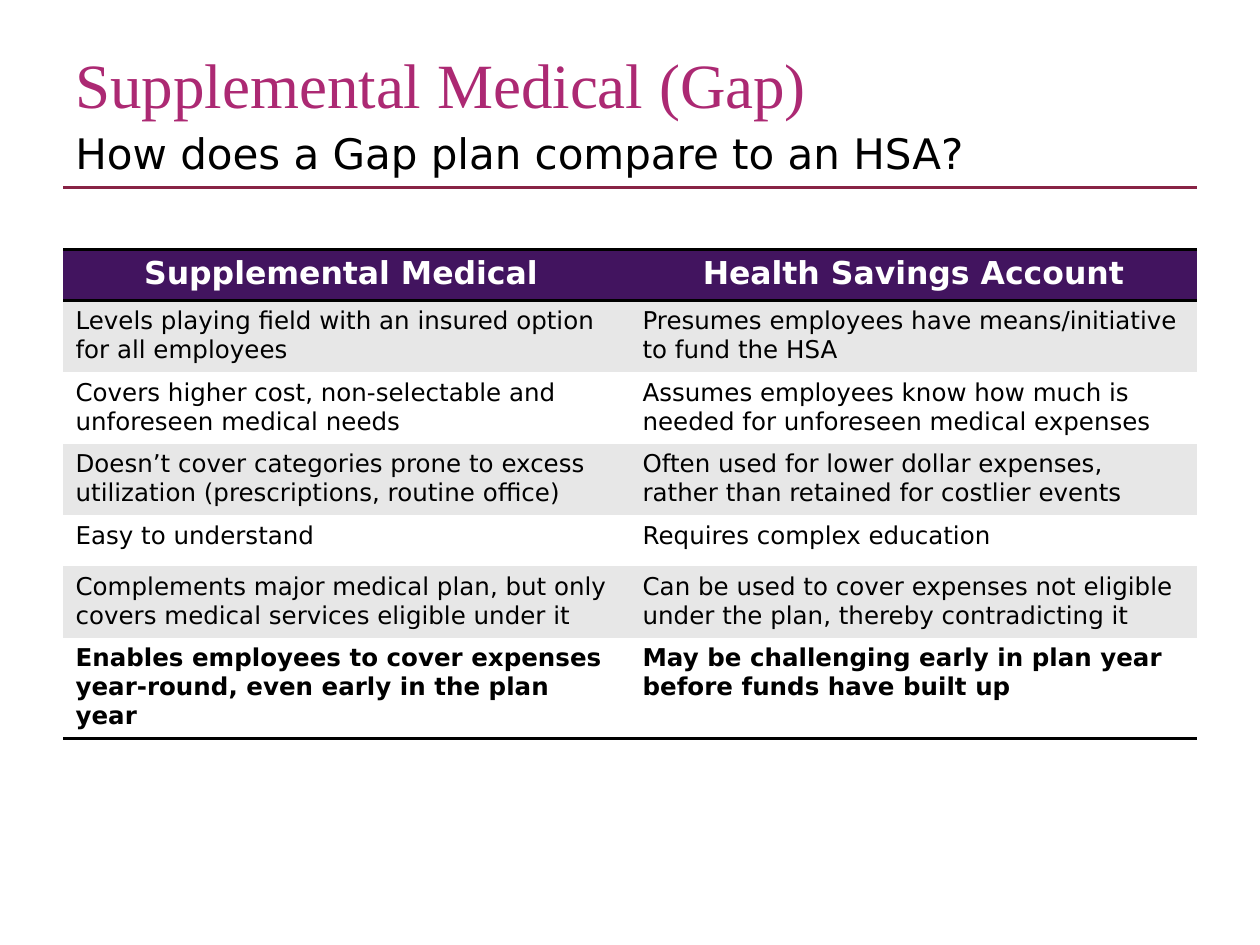
from lxml.etree import SubElement
from pptx import Presentation
from pptx.dml.color import RGBColor
from pptx.enum.shapes import MSO_CONNECTOR as Line
from pptx.enum.text import MSO_ANCHOR as Anchor, PP_ALIGN as Align
from pptx.oxml import parse_xml
from pptx.oxml.ns import nsdecls, qn
from pptx.util import Cm, Pt

PINK = RGBColor(0xAC, 0x29, 0x73)
WINE = RGBColor(0x88, 0x23, 0x45)
PLUM = RGBColor(0x42, 0x14, 0x5F)
GREY = RGBColor(0xE7, 0xE7, 0xE7)
WHITE = RGBColor(0xFF, 0xFF, 0xFF)
BLACK = RGBColor(0, 0, 0)
SANS = "DejaVu Sans"
SERIF = "Times New Roman"
PLAIN = "{2D5ABB26-0587-4C30-8999-92F81FD0307C}"

HEADS = [
    ("Supplemental Medical (Gap)", 0.76, 1.83, SERIF, 36, PINK),
    ("How does a Gap plan compare to an HSA?", 2.59, 0.97, SANS, 24, BLACK),
]
ROWS = [
    ("Supplemental Medical ", "Health Savings Account"),
    ("Levels playing field with an insured option for all employees",
     "Presumes employees have means/initiative to fund the HSA"),
    ("Covers higher cost, non-selectable and unforeseen medical needs",
     "Assumes employees know how much is needed for unforeseen medical expenses"),
    ("Doesn’t cover categories prone to excess utilization (prescriptions, routine office)",
     "Often used for lower dollar expenses, rather than retained for costlier events"),
    ("Easy to understand", "Requires complex education"),
    ("Complements major medical plan, but only covers medical services eligible under it",
     "Can be used to cover expenses not eligible under the plan, thereby contradicting it"),
    ("Enables employees to cover expenses year-round, even early in the plan year",
     "May be challenging early in plan year before funds have built up"),
]
LEFT, WIDTH = 1.27, 22.86
RULE, TOP, HIGH = 3.78, 5.03, 1.03


def style(font, name, size, color, bold=False):
    font.name, font.size, font.bold = name, Pt(size), bold
    font.color.rgb = color


def add_head(slide, text, top, high, name, size, color):
    box = slide.shapes.add_textbox(Cm(LEFT), Cm(top), Cm(WIDTH), Cm(high))
    frame = box.text_frame
    frame.word_wrap = True
    frame.vertical_anchor = Anchor.MIDDLE
    frame.text = text
    style(frame.paragraphs[0].runs[0].font, name, size, color)


def add_rule(slide):
    rule = slide.shapes.add_connector(
        Line.STRAIGHT, Cm(LEFT), Cm(RULE), Cm(LEFT + WIDTH), Cm(RULE))
    rule.line.color.rgb = WINE
    rule.line.width = Pt(2)
    SubElement(rule._element.spPr, qn("a:effectLst"))


def add_edges(cell, tags):
    props = cell._tc.get_or_add_tcPr()
    for spot, tag in enumerate(tags):
        props.insert(spot, parse_xml(
            f'<a:{tag} {nsdecls("a")} w="{Pt(2)}"><a:solidFill>'
            f'<a:srgbClr val="{BLACK}"/></a:solidFill></a:{tag}>'))


def add_grid(slide):
    count, last = len(ROWS), len(ROWS) - 1
    grid = slide.shapes.add_table(
        count, 2, Cm(LEFT), Cm(TOP), Cm(WIDTH), Cm(HIGH * count)).table
    grid._tbl.tblPr.find(qn("a:tableStyleId")).text = PLAIN
    for row, texts in enumerate(ROWS):
        head = row == 0
        fill = PLUM if head else GREY if row % 2 else WHITE
        for col, text in enumerate(texts):
            cell = grid.cell(row, col)
            cell.text = text
            cell.fill.solid()
            cell.fill.fore_color.rgb = fill
            para = cell.text_frame.paragraphs[0]
            para.alignment = Align.CENTER if head else Align.LEFT
            style(para.runs[0].font, SANS, 18 if head else 14,
                  WHITE if head else BLACK, row in (0, last))
            if head:
                add_edges(cell, ("lnT", "lnB"))
            elif row == last:
                add_edges(cell, ("lnB",))


def main():
    deck = Presentation()
    deck.slide_width, deck.slide_height = Cm(25.4), Cm(19.05)
    slide = deck.slides.add_slide(deck.slide_layouts[6])
    add_rule(slide)
    for head in HEADS:
        add_head(slide, *head)
    add_grid(slide)
    deck.save("out.pptx")


if __name__ == "__main__":
    main()
